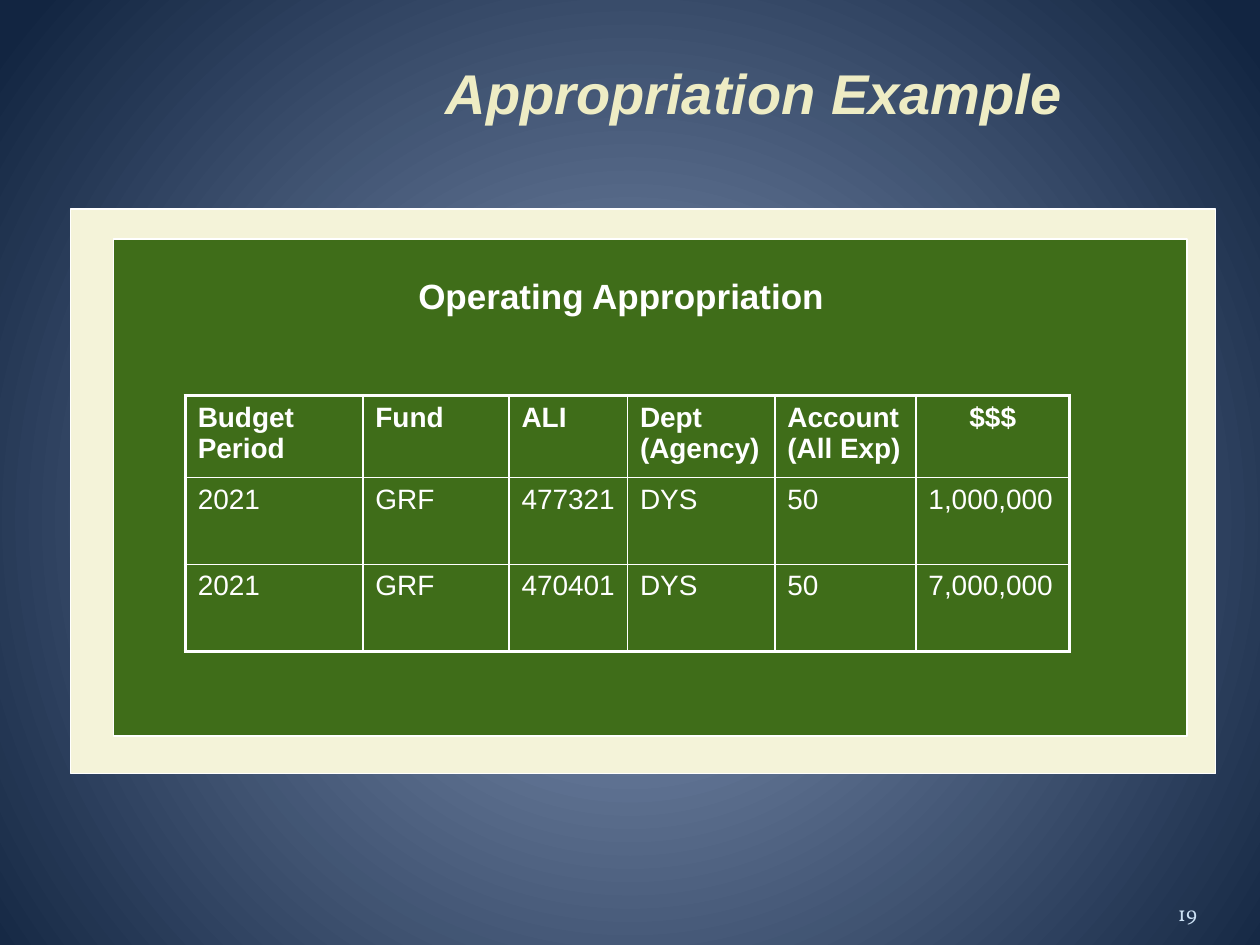
"""Build the appropriation example slide with its framed operating table."""
from lxml.etree import SubElement
from pptx import Presentation
from pptx.dml.color import RGBColor
from pptx.enum.shapes import MSO_SHAPE
from pptx.enum.text import MSO_ANCHOR, PP_ALIGN
from pptx.oxml import parse_xml
from pptx.oxml.ns import nsdecls, qn
from pptx.util import Inches, Pt

COLORS = {"white": "FFFFFF", "cream": "F4F3D9", "green": "3F6D19",
          "title": "EEECC4", "number": "CCE1F4"}
BACKGROUND_STOPS = [(0, "51DAFF"), (7, "7B85B3"), (14, "7386A7"), (100, "122541")]
PANELS = [((0.56, 1.66, 9.09, 4.48), "cream", 0.75),
          ((0.9, 1.9, 8.52, 3.94), "green", 1)]
ROWS = [
    ["Budget Period", "Fund", "ALI", "Dept (Agency)", "Account (All Exp)", "$$$"],
    ["2021", "GRF", "477321", "DYS", "50", "1,000,000"],
    ["2021", "GRF", "470401", "DYS", "50", "7,000,000"],
]
COLUMN_WIDTHS = [1.41, 1.16, 0.94, 1.17, 1.12, 1.22]
ROW_HEIGHTS = [0.65, 0.69, 0.69]
OUTER_LINE, INNER_LINE = 2.25, 1


def rgb(name):
    return RGBColor.from_string(COLORS[name])


def format_text(text_frame, text, size, color, align, bold=False, italic=False, font="Arial"):
    text_frame.text = text
    paragraph = text_frame.paragraphs[0]
    paragraph.alignment = align
    run_font = paragraph.runs[0].font
    run_font.name, run_font.size = font, Pt(size)
    run_font.bold, run_font.italic = bold, italic
    run_font.color.rgb = rgb(color)
    return paragraph


def add_text(slide, box, anchor, margins, *args, **style):
    text_frame = slide.shapes.add_textbox(*map(Inches, box)).text_frame
    text_frame.word_wrap = True
    text_frame.vertical_anchor = anchor
    text_frame.margin_left = text_frame.margin_right = Inches(margins[0])
    text_frame.margin_top = text_frame.margin_bottom = Inches(margins[1])
    return format_text(text_frame, *args, **style)


def set_background(slide):
    stops = "".join(f'<a:gs pos="{position * 1000}"><a:srgbClr val="{color}"/></a:gs>'
                    for position, color in BACKGROUND_STOPS)
    gradient = parse_xml(
        f'<a:gradFill {nsdecls("a")} rotWithShape="1"><a:gsLst>{stops}</a:gsLst>'
        '<a:path path="circle"><a:fillToRect l="10000" t="110000" r="10000" b="100000"/>'
        '</a:path></a:gradFill>')
    slide.background.fill.solid()
    properties = slide.element.find(".//" + qn("p:bgPr"))
    properties.replace(properties.find(qn("a:solidFill")), gradient)


def add_panel(slide, box, color, line_width):
    panel = slide.shapes.add_shape(MSO_SHAPE.RECTANGLE, *map(Inches, box))
    panel.shadow.inherit = False
    panel.fill.solid()
    panel.fill.fore_color.rgb = rgb(color)
    panel.line.color.rgb = rgb("white")
    panel.line.width = Pt(line_width)


def set_borders(cell, outer_sides):
    properties = cell._tc.get_or_add_tcPr()
    for side, outer in outer_sides.items():
        width = Pt(OUTER_LINE if outer else INNER_LINE)
        line = SubElement(properties, qn(f"a:ln{side}"), w=str(width))
        SubElement(SubElement(line, qn("a:solidFill")), qn("a:srgbClr"), val=COLORS["white"])


def add_appropriation_table(slide):
    last_row, last_column = len(ROWS) - 1, len(COLUMN_WIDTHS) - 1
    table = slide.shapes.add_table(
        len(ROWS), len(COLUMN_WIDTHS), Inches(1.47), Inches(3.14),
        Inches(sum(COLUMN_WIDTHS)), Inches(sum(ROW_HEIGHTS))).table
    table.first_row = table.horz_banding = False
    for column, width in zip(table.columns, COLUMN_WIDTHS):
        column.width = Inches(width)
    for row, height in zip(table.rows, ROW_HEIGHTS):
        row.height = Inches(height)
    for r, texts in enumerate(ROWS):
        for c, text in enumerate(texts):
            cell = table.cell(r, c)
            align = PP_ALIGN.CENTER if text == "$$$" else PP_ALIGN.LEFT
            format_text(cell.text_frame, text, 16, "white", align, bold=r == 0)
            set_borders(cell, {"L": c == 0, "R": c == last_column,
                               "T": r == 0, "B": r == last_row})
            cell.fill.background()


def main():
    presentation = Presentation()
    presentation.slide_width, presentation.slide_height = Inches(10), Inches(7.5)
    slide = presentation.slides.add_slide(presentation.slide_layouts[6])
    set_background(slide)
    add_text(slide, (8.67, 6.95, 0.83, 0.4), MSO_ANCHOR.BOTTOM, (0, 0),
             "19", 12, "number", PP_ALIGN.RIGHT, font="Vollkorn")
    outer_panel, inner_panel = PANELS
    add_panel(slide, *outer_panel)
    add_text(slide, (2.07, 0.37, 7.83, 0.68), MSO_ANCHOR.BOTTOM, (0.1, 0.05),
             "Appropriation Example", 32, "title", PP_ALIGN.CENTER, bold=True, italic=True)
    add_panel(slide, *inner_panel)
    add_appropriation_table(slide)
    heading = add_text(slide, (1.17, 2.13, 7.02, 0.43), MSO_ANCHOR.MIDDLE, (0.1, 0.05),
                       "Operating Appropriation", 20, "white", PP_ALIGN.CENTER, bold=True)
    heading._p.get_or_add_pPr().set("marL", str(Inches(0.5)))
    presentation.save("out.pptx")


if __name__ == "__main__":
    main()
